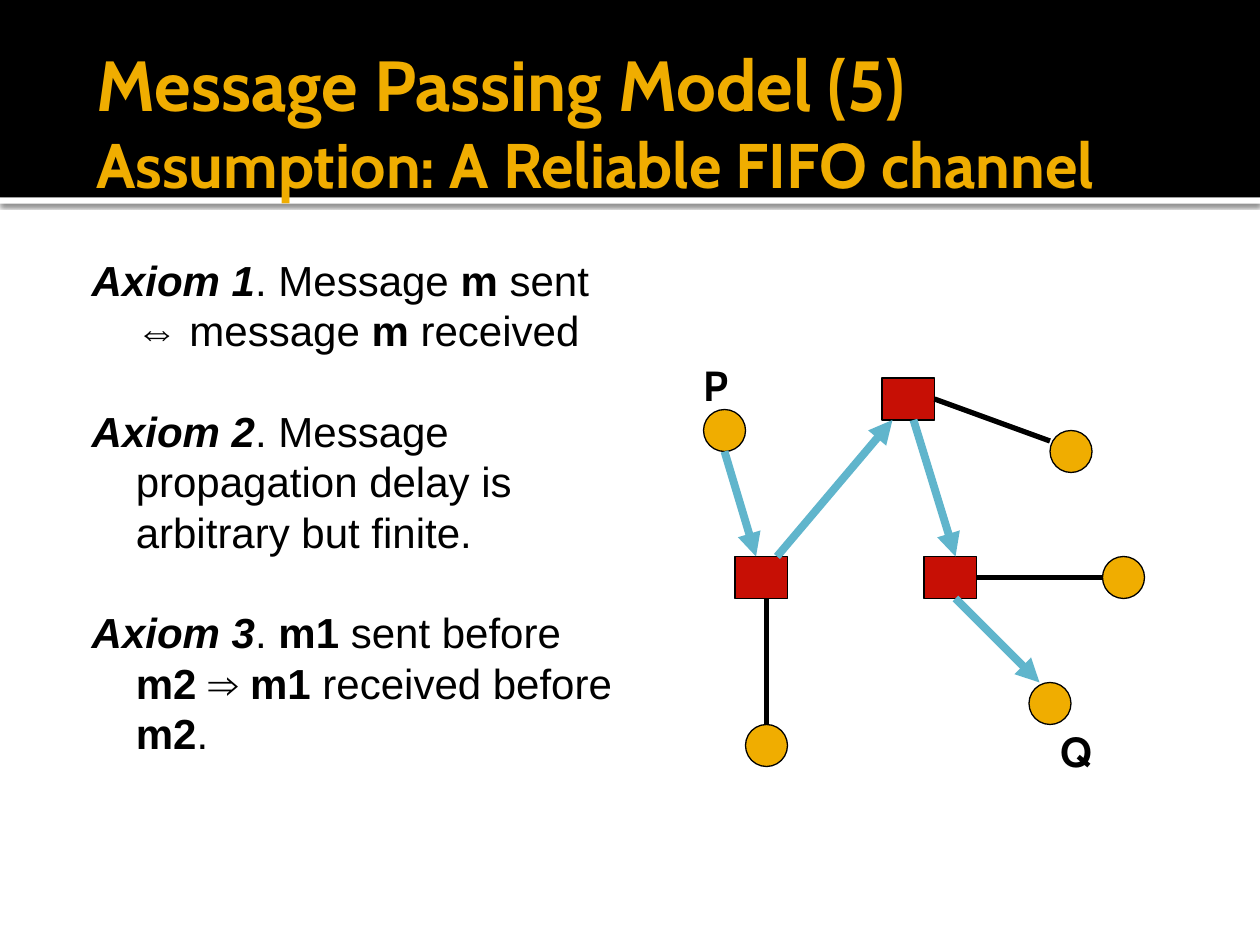
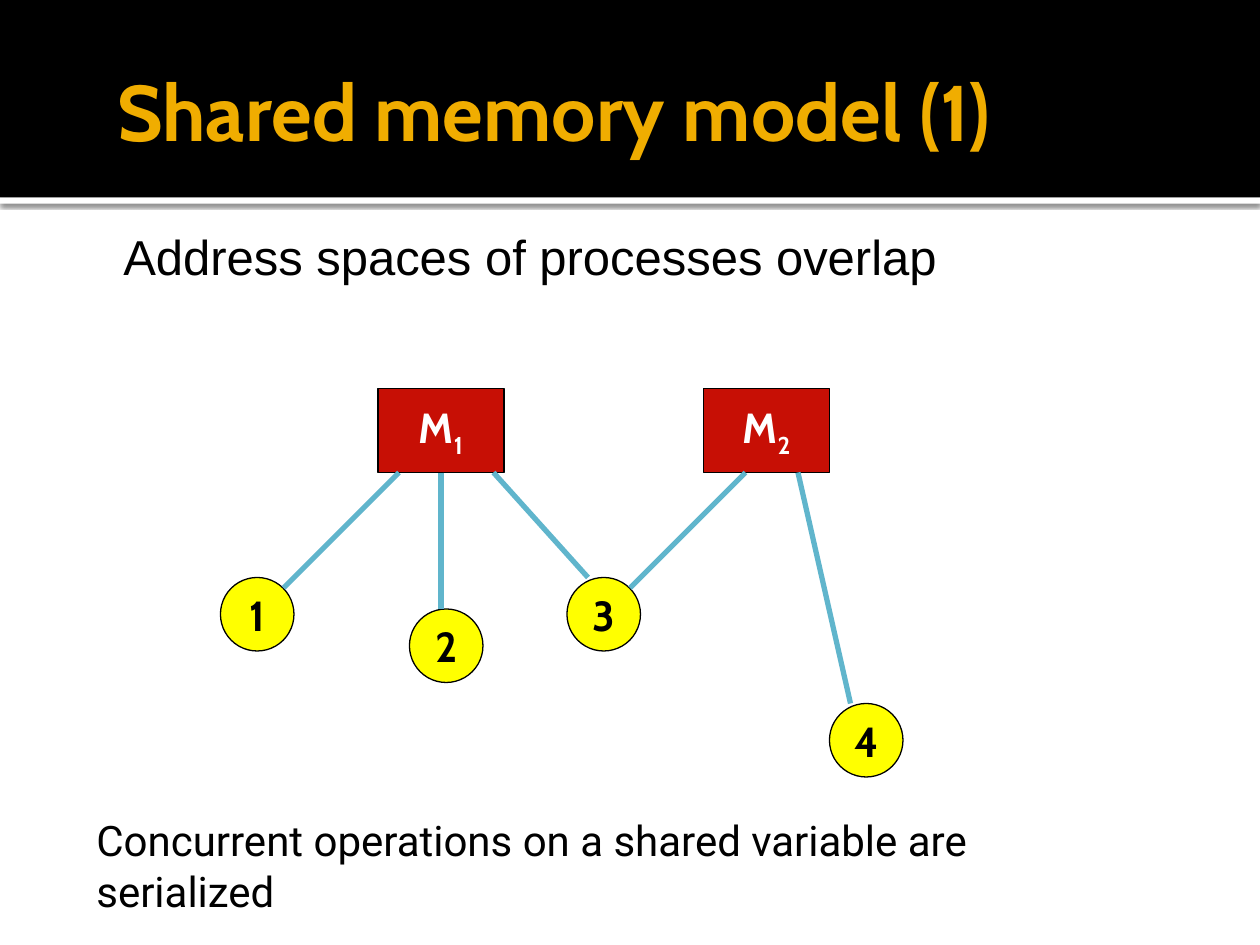
from pptx import Presentation
from pptx.dml.color import RGBColor
from pptx.enum.shapes import MSO_CONNECTOR, MSO_SHAPE
from pptx.enum.text import MSO_ANCHOR, PP_ALIGN
from pptx.oxml.ns import qn
from pptx.util import Emu, Pt
from lxml.etree import SubElement

# Shared scale, colours and text formats
PIXEL = 7620  # 120 px to the inch
SLIDE_WIDTH, SLIDE_HEIGHT = 1200, 900
BAND_HEIGHT = 188

COLORS = {
    "black": "000000",
    "white": "FFFFFF",
    "gold": "F0AD00",
    "red": "C70F05",
    "yellow": "FFFF00",
    "blue": "60B5CC",
}

TITLE = {"name": "Cabin", "size": Pt(45), "bold": True, "color": "gold"}
BODY = {"name": "Arial", "size": Pt(24), "color": "black"}
LABEL = {"name": "Cabin", "size": Pt(24), "bold": True, "color": "black"}
MEMORY_LABEL = LABEL | {"color": "white"}
CAPTION = BODY | {"name": "Roboto"}
BOLD = {"bold": True}
AXIOM = {"bold": True, "italic": True}
SUBSCRIPT = {"baseline": -25000}
HANGING = {"marL": 0.48, "indent": -0.35}


def px(value):
    return Emu(value * PIXEL)


def rgb(name):
    return RGBColor.from_string(COLORS[name])


# Text
def add_runs(paragraph, runs, base):
    """Write (text, overrides) pairs on top of a base format."""
    for text, overrides in runs:
        run = paragraph.add_run()
        run.text = text
        for key, value in (base | overrides).items():
            if key == "color":
                run.font.color.rgb = rgb(value)
            elif key == "baseline":
                run._r.get_or_add_rPr().set("baseline", str(value))
            else:
                setattr(run.font, key, value)


def add_text_box(slide, box, insets=(12, 6, 12, 6), wrap=True):
    frame = slide.shapes.add_textbox(*map(px, box)).text_frame
    frame.word_wrap = wrap
    for side, inset in zip(("left", "top", "right", "bottom"), insets):
        setattr(frame, f"margin_{side}", px(inset))
    return frame


def add_title(slide, box, lines):
    frame = add_text_box(slide, box, (12, 6, 6, 6))
    frame.vertical_anchor = MSO_ANCHOR.MIDDLE
    paragraph = frame.paragraphs[0]
    for index, (text, size) in enumerate(lines):
        if index:
            paragraph.add_line_break()
        add_runs(paragraph, [(text, {"size": Pt(size)})], TITLE)


def add_body(slide, box, paragraphs, base, line_spacing, gap=0):
    frame = add_text_box(slide, box, (12, 12, 12, 6))
    for index, runs in enumerate(paragraphs):
        paragraph = frame.add_paragraph() if index else frame.paragraphs[0]
        paragraph.line_spacing = line_spacing
        paragraph.space_before = Pt(gap if index else 0)
        properties = paragraph._p.get_or_add_pPr()
        for key, inches in HANGING.items():
            properties.set(key, str(round(inches * 914400)))
        add_runs(paragraph, runs, base)


def add_label(slide, box, text, style, wrap=False):
    frame = add_text_box(slide, box, wrap=wrap)
    add_runs(frame.paragraphs[0], [(text, {})], style)


# Shapes and lines
def add_node(slide, kind, box, fill, outlined=True, runs=(), style=LABEL):
    shape = slide.shapes.add_shape(kind, *map(px, box))
    shape.shadow.inherit = False
    shape.fill.solid()
    shape.fill.fore_color.rgb = rgb(fill)
    if outlined:
        shape.line.color.rgb = rgb("black")
        shape.line.width = Pt(0.75)
    else:
        shape.line.fill.background()
    if runs:
        frame = shape.text_frame
        frame.word_wrap = False
        frame.vertical_anchor = MSO_ANCHOR.MIDDLE
        frame.paragraphs[0].alignment = PP_ALIGN.CENTER
        add_runs(frame.paragraphs[0], runs, style)
    return shape


def add_link(slide, points, color, width=3, arrow=False):
    connector = slide.shapes.add_connector(MSO_CONNECTOR.STRAIGHT, *map(px, points))
    connector.line.color.rgb = rgb(color)
    connector.line.width = Pt(width)
    if arrow:
        line = connector.line._get_or_add_ln()
        SubElement(line, qn("a:tailEnd"), type="triangle")
    SubElement(connector._element.spPr, qn("a:effectLst"))


def add_base_slide(presentation):
    """Blank slide with the black title band and its shadowed white strip."""
    slide = presentation.slides.add_slide(presentation.slide_layouts[6])
    strip = add_node(slide, MSO_SHAPE.RECTANGLE,
                     (0, BAND_HEIGHT, SLIDE_WIDTH, 6), "white", outlined=False)
    effects = strip._element.spPr.find(qn("a:effectLst"))
    shadow = SubElement(effects, qn("a:outerShdw"), blurRad=str(Pt(2.5)),
                        dist=str(Pt(0.8)), dir="5400000", rotWithShape="0")
    color = SubElement(shadow, qn("a:srgbClr"), val=COLORS["black"])
    SubElement(color, qn("a:alpha"), val="60000")
    add_node(slide, MSO_SHAPE.RECTANGLE,
             (0, 0, SLIDE_WIDTH, BAND_HEIGHT), "black", outlined=False)
    return slide


# Slides
def build_message_passing(presentation):
    slide = add_base_slide(presentation)
    add_title(slide, (80, 40, 1020, 150), [
        ("Message Passing Model (5)", 40.5),
        ("Assumption: A Reliable FIFO channel", 36),
    ])
    axioms = [
        [("Axiom 1", AXIOM), (". Message ", {}), ("m", BOLD),
         (" sent ⇔ message ", {}), ("m", BOLD), (" received", {})],
        [("Axiom 2", AXIOM),
         (". Message propagation delay is arbitrary but finite.", {})],
        [("Axiom 3", AXIOM), (". ", {}), ("m1", BOLD), (" sent before ", {}),
         ("m2 ", BOLD), ("⇒ ", {}), ("m1", BOLD), (" received before ", {}),
         ("m2", BOLD), (".", {})],
    ]
    add_body(slide, (60, 230, 540, 610), axioms, BODY, Pt(28.8), gap=28.8)

    # Processes and routers
    for left, top in [(670, 390), (980, 650), (710, 690), (1000, 410), (1050, 530)]:
        add_node(slide, MSO_SHAPE.OVAL, (left, top, 40, 40), "gold")
    for left, top in [(700, 530), (880, 530), (840, 360)]:
        add_node(slide, MSO_SHAPE.RECTANGLE, (left, top, 50, 40), "red")

    # Plain links, then the route from P to Q
    for points in [(730, 570, 730, 690), (930, 550, 1050, 550), (890, 380, 1000, 420)]:
        add_link(slide, points, "black")
    for points in [(690, 430, 720, 530), (740, 530, 850, 400),
                   (870, 400, 910, 530), (910, 570, 990, 650)]:
        add_link(slide, points, "blue", width=4.5, arrow=True)
    add_label(slide, (658, 336, 48, 61), "P", LABEL)
    add_label(slide, (998, 685, 55, 61), "Q", LABEL)


def build_shared_memory(presentation):
    slide = add_base_slide(presentation)
    add_title(slide, (100, 30, 1020, 150), [("Shared memory model (1)", 45)])
    add_body(slide, (90, 210, 940, 630),
             [[("Address spaces of processes overlap", {})]],
             BODY | {"size": Pt(28)}, 0.9)

    # Memories and the processes that share them
    for number, left in [("1", 360), ("2", 670)]:
        add_node(slide, MSO_SHAPE.RECTANGLE, (left, 370, 120, 80), "red",
                 runs=[("M", {}), (number, SUBSCRIPT)], style=MEMORY_LABEL)
    for number, left, top in [("1", 210, 550), ("2", 390, 580),
                              ("3", 540, 550), ("4", 790, 670)]:
        add_node(slide, MSO_SHAPE.OVAL, (left, top, 70, 70), "yellow",
                 runs=[(number, {})])
    for points in [(380, 450, 270, 560), (420, 450, 420, 580), (560, 550, 470, 450),
                   (710, 450, 600, 560), (810, 670, 760, 450)]:
        add_link(slide, points, "blue")

    add_label(slide, (80, 770, 1000, 60),
              "Concurrent operations on a shared variable are serialized",
              CAPTION, wrap=True)


def main():
    presentation = Presentation()
    presentation.slide_width = px(SLIDE_WIDTH)
    presentation.slide_height = px(SLIDE_HEIGHT)
    build_message_passing(presentation)
    build_shared_memory(presentation)
    presentation.save("out.pptx")


if __name__ == "__main__":
    main()
